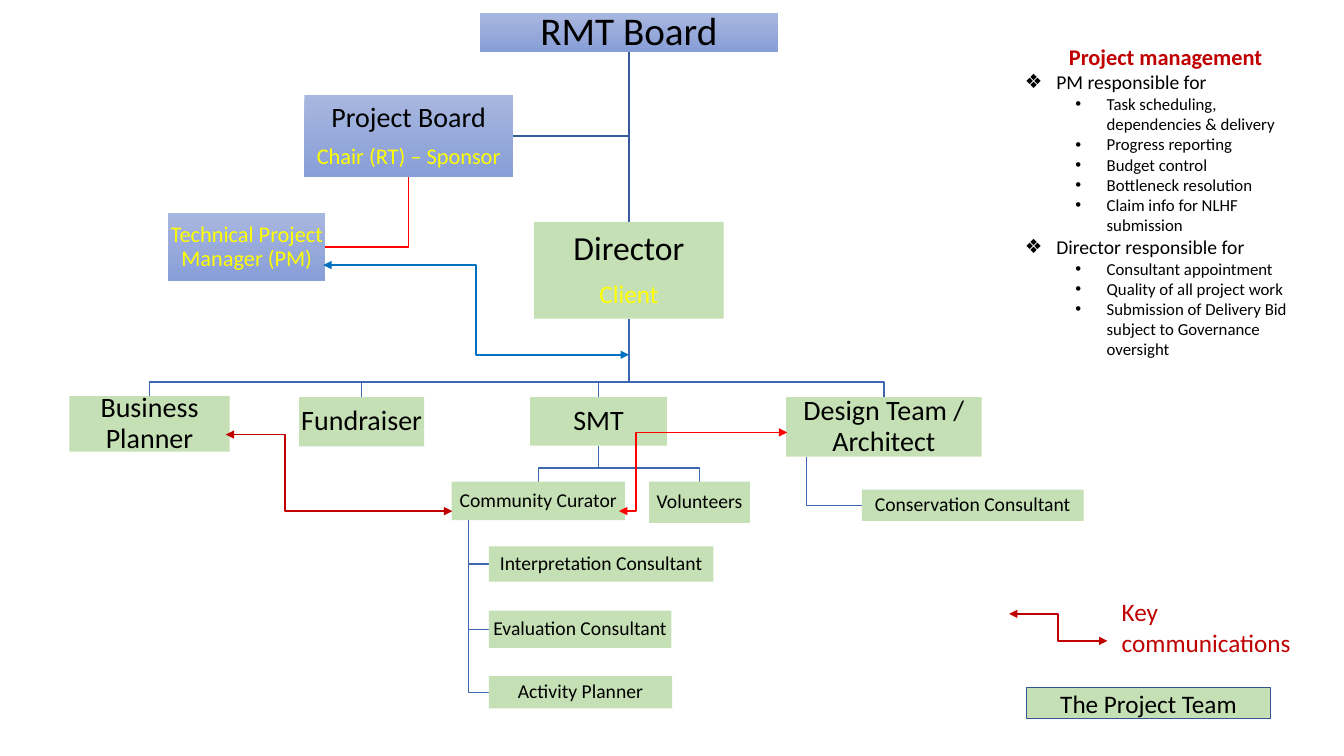
from collections import namedtuple

from lxml import etree
from pptx import Presentation
from pptx.dml.color import RGBColor
from pptx.enum.shapes import MSO_CONNECTOR, MSO_SHAPE
from pptx.enum.text import MSO_ANCHOR, PP_ALIGN
from pptx.oxml.ns import qn
from pptx.util import Cm, Pt

RECT, ELBOW = MSO_SHAPE.RECTANGLE, MSO_CONNECTOR.ELBOW
MIDDLE, TOP = MSO_ANCHOR.MIDDLE, MSO_ANCHOR.TOP
LEFT, CENTER = PP_ALIGN.LEFT, PP_ALIGN.CENTER

BLACK = RGBColor(0x00, 0x00, 0x00)
YELLOW = RGBColor(0xFF, 0xFF, 0x00)
RED = RGBColor(0xFF, 0x00, 0x00)
DARK_RED = RGBColor(0xC0, 0x00, 0x00)
BLUE = RGBColor(0x00, 0x70, 0xC0)
GREEN = RGBColor(0xC5, 0xE0, 0xB4)
GRADIENT = (RGBColor(0xA8, 0xB7, 0xDF), RGBColor(0x88, 0x9E, 0xD7))
BOARD_WIRE = RGBColor(0x36, 0x5B, 0x9D)
TEAM_WIRE = RGBColor(0x3E, 0x67, 0xB2)
BORDER = RGBColor(0x32, 0x54, 0x91)


class Box(namedtuple("Box", "x y w h")):
    """A rectangle in centimetres."""

    @property
    def cx(self):
        return self.x + self.w / 2

    @property
    def cy(self):
        return self.y + self.h / 2

    @property
    def right(self):
        return self.x + self.w

    @property
    def bottom(self):
        return self.y + self.h


RMT = Box(12.09, 0.33, 7.52, 0.97)
PROJECT_BOARD = Box(7.67, 2.39, 5.26, 2.08)
MANAGER = Box(4.24, 5.36, 3.96, 1.73)
DIRECTOR = Box(13.46, 5.59, 4.78, 2.44)
PLANNER = Box(1.75, 9.98, 4.04, 1.4)
FUNDRAISER = Box(7.54, 10.01, 3.15, 1.24)
SMT = Box(13.36, 10.01, 3.45, 1.22)
DESIGN = Box(19.81, 10.01, 4.93, 1.5)
CURATOR = Box(11.38, 12.14, 4.37, 0.97)
VOLUNTEERS = Box(16.36, 12.14, 2.54, 1.04)
CONSERVATION = Box(21.72, 12.34, 5.59, 0.79)
INTERPRETATION = Box(12.32, 13.77, 5.66, 0.89)
EVALUATION = Box(12.32, 15.39, 4.6, 0.94)
ACTIVITY = Box(12.32, 17.04, 4.62, 0.81)

BOARD_BOXES = [
    (RMT, [("RMT Board", 28, BLACK)]),
    (PROJECT_BOARD, [("Project Board", 20, BLACK),
                     ("Chair (RT) – Sponsor", 16, YELLOW)]),
    (MANAGER, [("Technical Project Manager (PM)", 16, YELLOW)]),
]
TEAM_BOXES = [
    (DIRECTOR, [("Director", 24, BLACK), ("Client", 18, YELLOW)]),
    (PLANNER, [("Business Planner", 20, BLACK)]),
    (FUNDRAISER, [("Fundraiser", 20, BLACK)]),
    (SMT, [("SMT", 20, BLACK)]),
    (DESIGN, [("Design Team / Architect", 20, BLACK)]),
    (CURATOR, [("Community Curator", 14, BLACK)]),
    (VOLUNTEERS, [("Volunteers", 14, BLACK)]),
    (CONSERVATION, [("Conservation Consultant", 14, BLACK)]),
    (INTERPRETATION, [("Interpretation Consultant", 14, BLACK)]),
    (EVALUATION, [("Evaluation Consultant", 14, BLACK)]),
    (ACTIVITY, [("Activity Planner", 14, BLACK)]),
]
DUTIES = [
    ("PM responsible for", [
        "Task scheduling, dependencies & delivery", "Progress reporting",
        "Budget control", "Bottleneck resolution",
        "Claim info for NLHF submission"]),
    ("Director responsible for", [
        "Consultant appointment", "Quality of all project work",
        "Submission of Delivery Bid subject to Governance oversight"]),
]


class Chart:
    font = "Calibri"

    def __init__(self, slide):
        self.shapes = slide.shapes

    def put_text(self, p, text, size, color, align=LEFT, bold=False):
        p.text = text
        p.alignment = align
        f = p.runs[0].font
        f.name, f.size, f.bold = self.font, Pt(size), bold
        f.color.rgb = color

    def box(self, box, lines, fill=None, border=None, spacing=0.9):
        """Draw a filled rectangle; without a fill it gets the board gradient."""
        sp = self.shapes.add_shape(RECT, *map(Cm, box))
        sp.shadow.inherit = False
        if fill is None:
            sp.fill.gradient()
            sp.fill.gradient_angle = 270
            for stop, color in zip(sp.fill.gradient_stops, GRADIENT):
                stop.color.rgb = color
        else:
            sp.fill.solid()
            sp.fill.fore_color.rgb = fill
        if border is None:
            sp.line.fill.background()
        else:
            sp.line.color.rgb = border
            sp.line.width = Pt(0.75)
        tf = sp.text_frame
        tf.word_wrap = True
        tf.vertical_anchor = MIDDLE
        tf.margin_left = tf.margin_right = Cm(0.02)
        tf.margin_top = tf.margin_bottom = Cm(0.02)
        for i, (text, size, color) in enumerate(lines):
            p = tf.add_paragraph() if i else tf.paragraphs[0]
            self.put_text(p, text, size, color, CENTER)
            p.line_spacing = spacing
            if i < len(lines) - 1:
                p.space_after = Pt(round(size * 0.4))

    def wire(self, color, *points):
        points = [(Cm(x), Cm(y)) for x, y in points]
        fb = self.shapes.build_freeform(*points[0])
        fb.add_line_segments(points[1:], close=False)
        sp = fb.convert_to_shape()
        sp.shadow.inherit = False
        sp.fill.background()
        sp.line.color.rgb = color
        sp.line.width = Pt(1)

    def branch(self, parent, bus, children):
        """Wire a parent's foot to the tops of its children over a level bus."""
        for c in children:
            self.wire(TEAM_WIRE, (parent.cx, parent.bottom), (parent.cx, bus),
                      (c.cx, bus), (c.cx, c.y))

    def hang(self, parent, x, children):
        """Wire a parent's foot at x to the left sides of its children."""
        for c in children:
            self.wire(TEAM_WIRE, (x, parent.bottom), (x, c.cy), (c.x, c.cy))

    def arrow(self, start, end, color, bend=0.5):
        """Draw a two-headed elbow arrow that turns at the given share of its width."""
        cn = self.shapes.add_connector(ELBOW, *map(Cm, start + end))
        cn.line.color.rgb = color
        cn.line.width = Pt(1.25)
        spPr = cn.element.spPr
        guides = spPr.find(qn("a:prstGeom")).find(qn("a:avLst"))
        etree.SubElement(guides, qn("a:gd"), name="adj1",
                         fmla=f"val {round(bend * 100000)}")
        for tag in ("a:headEnd", "a:tailEnd"):
            etree.SubElement(spPr.find(qn("a:ln")), qn(tag), type="triangle")
        etree.SubElement(spPr, qn("a:effectLst"))

    def text(self, box):
        tf = self.shapes.add_textbox(*map(Cm, box)).text_frame
        tf.word_wrap = True
        tf.vertical_anchor = TOP
        return tf

    def bullet(self, tf, text, char, size, indent):
        p = tf.add_paragraph()
        pPr = p._p.get_or_add_pPr()
        pPr.set("marL", str(Cm(indent)))
        pPr.set("indent", str(-Cm(0.79)))
        etree.SubElement(pPr, qn("a:buFont"), typeface="Arial")
        etree.SubElement(pPr, qn("a:buChar"), char=char)
        self.put_text(p, text, size, BLACK)


def main():
    prs = Presentation()
    prs.slide_width, prs.slide_height = Cm(33.87), Cm(19.05)
    s = Chart(prs.slides.add_slide(prs.slide_layouts[6]))

    s.wire(RED, (PROJECT_BOARD.cx, PROJECT_BOARD.bottom),
           (PROJECT_BOARD.cx, MANAGER.cy), (MANAGER.right, MANAGER.cy))
    s.wire(BOARD_WIRE, (RMT.cx, RMT.bottom), (RMT.cx, PROJECT_BOARD.cy),
           (PROJECT_BOARD.right, PROJECT_BOARD.cy))
    s.wire(BOARD_WIRE, (RMT.cx, RMT.bottom), (DIRECTOR.cx, DIRECTOR.y))
    s.branch(DIRECTOR, 9.63, [PLANNER, FUNDRAISER, SMT, DESIGN])
    s.branch(SMT, 11.79, [CURATOR, VOLUNTEERS])
    s.hang(CURATOR, 11.81, [INTERPRETATION, EVALUATION, ACTIVITY])
    s.hang(DESIGN, 20.32, [CONSERVATION])
    for box, lines in BOARD_BOXES:
        s.box(box, lines)
    for box, lines in TEAM_BOXES:
        s.box(box, lines, GREEN)

    s.arrow((8.15, 6.68), (DIRECTOR.cx, 8.94), BLUE)
    s.arrow((5.69, 10.95), (11.4, 12.88), DARK_RED, 0.26)
    s.arrow((15.6, 12.88), (19.84, 10.9), RED, 0.1)

    tf = s.text(Box(25.58, 0.97, 7.59, 8.28))
    s.put_text(tf.paragraphs[0], "Project management", 16, DARK_RED, CENTER, True)
    for role, tasks in DUTIES:
        s.bullet(tf, role, "❖", 14, 0.79)
        for task in tasks:
            s.bullet(tf, task, "•", 12, 2.06)

    s.arrow((25.43, 15.47), (27.91, 16.15), DARK_RED)
    tf = s.text(Box(28.02, 14.91, 4.85, 1.8))
    s.put_text(tf.paragraphs[0], "Key communications", 18, DARK_RED)
    s.box(Box(25.86, 17.32, 6.17, 0.79), [("The Project Team", 18, BLACK)],
          GREEN, BORDER, 1.0)
    prs.save("out.pptx")


if __name__ == "__main__":
    main()
